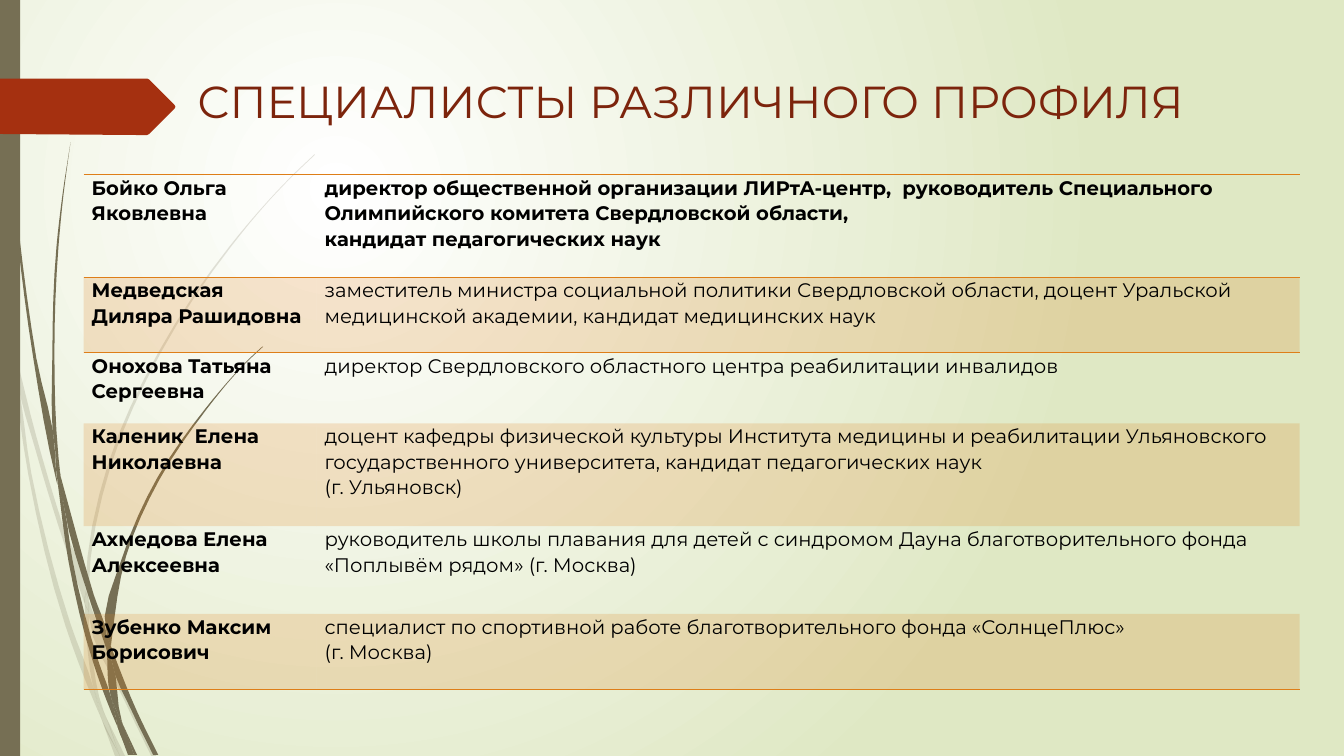
import pptx
import pptx.dml.color
import pptx.enum.shapes
import pptx.enum.text
import pptx.oxml
import pptx.oxml.ns
import pptx.util
from pptx.util import Inches

FONT = "Montserrat"
OLIVE, RUST, DARK_RUST, ORANGE, BLACK = "766F54", "A53010", "7C240C", "DE7E18", "000000"
TITLE = "СПЕЦИАЛИСТЫ РАЗЛИЧНОГО ПРОФИЛЯ"

# Row height, lines of the name, lines of the position
SPECIALISTS = [
    (1.02, ["Бойко Ольга", "Яковлевна"],
     ["директор общественной организации ЛИРтА-центр,  руководитель Специального "
      "Олимпийского комитета Свердловской области,", "кандидат педагогических наук"]),
    (0.75, ["Медведская Диляра Рашидовна"],
     ["заместитель министра социальной политики Свердловской области, доцент Уральской "
      "медицинской академии, кандидат медицинских наук"]),
    (0.7, ["Онохова Татьяна Сергеевна"],
     ["директор Свердловского областного центра реабилитации инвалидов"]),
    (1.02, ["Каленик  Елена Николаевна"],
     ["доцент кафедры физической культуры Института медицины и реабилитации Ульяновского "
      "государственного университета, кандидат педагогических наук", "(г. Ульяновск)"]),
    (0.87, ["Ахмедова Елена Алексеевна"],
     ["руководитель школы плавания для детей с синдромом Дауна благотворительного фонда "
      "«Поплывём рядом» (г. Москва)"]),
    (0.75, ["Зубенко Максим", "Борисович"],
     ["специалист по спортивной работе благотворительного фонда «СолнцеПлюс»", "(г. Москва)"]),
]
COLUMN_WIDTHS = [2.31, 9.75]
BORDERS = {0: "TB", 1: "T", len(SPECIALISTS) - 1: "B"}

PALE_GRASS = [
    [(0.11, 3.5), (0.09, 3.22), (0, 2.82), (0, 2.99), (0.1, 3.44)],
    [(0.58, 5.22), (0.84, 5.99), (0.85, 5.86), (0.62, 5.2), (0.36, 4.33), (0.14, 3.45), (0.17, 3.76), (0.36, 4.49)],
    [(0.92, 6.07), (0.88, 5.96), (0.88, 6.1), (1.23, 6.94), (1.5, 7.5), (1.55, 7.5), (1.27, 6.92)],
    [(1.19, 7.5), (1.24, 7.5), (1.05, 7.11)],
    [(0.93, 6.83), (0.7, 6.19), (0.31, 4.69), (0.17, 3.76), (0.11, 3.5), (0.28, 4.7), (0.65, 6.21), (0.92, 6.93),
     (1.01, 7.14), (0.99, 7.07)],
    [(0.84, 5.99), (0.87, 6.46), (0.93, 6.83), (0.96, 6.92), (1.05, 7.11), (1.03, 7.06), (0.91, 6.46), (0.88, 6.1),
     (0.88, 6.08)],
    [(0.88, 5.84), (1.1, 4.62), (1.6, 3.49), (2.29, 2.45), (2.68, 1.98), (2.9, 1.75), (3.12, 1.54), (3.12, 1.53),
     (2.89, 1.75), (2.68, 1.97), (2.28, 2.44), (1.58, 3.48), (1.07, 4.61), (0.85, 5.84), (0.85, 5.86), (0.88, 5.96)],
    [(1.01, 7.14), (1.14, 7.5), (1.19, 7.5)],
    [(0.88, 6.08), (0.88, 6.1), (0.88, 5.96), (0.85, 5.86), (0.84, 5.99)],
    [(0.96, 6.92), (0.93, 6.83), (0.99, 7.07), (1.01, 7.14), (1.19, 7.5), (1.05, 7.11)],
]
DARK_GRASS = [
    [(0.07, 1.1), (0.17, 2.33), (0.33, 3.55), (0.56, 4.77), (0.57, 4.81), (0.55, 4.57), (0.55, 4.53), (0.36, 3.55),
     (0.19, 2.32), (0.08, 1.09), (0.05, 0.48), (0.04, 0), (0.03, 0), (0.04, 0.48)],
    [(0.88, 5.92), (1.06, 6.45), (1.06, 6.31), (0.93, 5.9), (0.6, 4.72), (0.64, 5.05)],
    [(1.13, 6.49), (1.1, 6.41), (1.11, 6.56), (1.32, 7.08), (1.52, 7.49), (1.57, 7.49), (1.36, 7.06)],
    [(1.1, 6.91), (0.98, 6.57), (0.72, 5.56), (0.64, 5.05), (0.57, 4.77), (0.68, 5.57), (0.93, 6.59), (1.11, 7.08),
     (1.17, 7.22), (1.16, 7.17)],
    [(0.6, 4.72), (0.58, 4.53), (0.54, 3.49), (0.58, 2.45), (0.63, 1.93), (0.7, 1.41), (0.62, 1.93), (0.56, 2.45),
     (0.52, 3.49), (0.55, 4.49)],
    [(1.33, 7.49), (1.36, 7.49), (1.22, 7.19)],
    [(0.57, 4.77), (0.64, 5.05), (0.6, 4.72), (0.55, 4.49), (0.55, 4.53)],
    [(1.11, 6.33), (1.25, 5.52), (1.58, 4.76), (2.05, 4.06), (2.31, 3.74), (2.45, 3.59), (2.61, 3.44), (2.6, 3.44),
     (2.45, 3.58), (2.31, 3.73), (2.04, 4.05), (1.56, 4.74), (1.22, 5.51), (1.06, 6.31), (1.1, 6.41)],
    [(1.17, 7.22), (1.27, 7.49), (1.31, 7.49)],
    [(1.06, 6.45), (1.1, 6.91), (1.16, 7.06), (1.22, 7.19), (1.21, 7.16), (1.11, 6.56), (1.09, 6.51)],
    [(1.06, 6.45), (1.09, 6.51), (1.11, 6.56), (1.1, 6.41), (1.06, 6.31)],
    [(1.16, 7.06), (1.1, 6.91), (1.16, 7.17), (1.17, 7.22), (1.3, 7.49), (1.33, 7.49), (1.22, 7.19)],
]
ARROW = [(0, 0.78), (1.46, 0.78), (1.48, 0.79), (1.73, 1.04), (1.74, 1.06), (1.73, 1.08),
         (1.48, 1.33), (1.46, 1.34), (1.36, 1.34), (0, 1.33)]


def rgb(color):
    return pptx.dml.color.RGBColor.from_string(color)


def xml(source):
    return pptx.oxml.parse_xml(source.replace(">", f" {pptx.oxml.ns.nsdecls('a')}>", 1))


def paint(target, properties, color, percent=100):
    """Fill a shape or cell with one colour at the given opacity."""
    target.fill.solid()
    target.fill.fore_color.rgb = rgb(color)
    if percent < 100:
        hue = properties.find(pptx.oxml.ns.qn("a:solidFill"))[0]
        hue.append(xml(f'<a:alpha val="{percent * 1000}"></a:alpha>'))


def finish(shape, color, percent=100):
    paint(shape, shape.element.spPr, color, percent)
    shape.line.fill.background()
    shape.shadow.inherit = False


def heading(before, knot, after, fallback):
    """Direction of a curve at a knot; sharp corners keep the fallback."""
    came, goes = knot - before, after - knot
    first, second = came / abs(came), goes / abs(goes)
    if (first * second.conjugate()).real < 0.8:
        return fallback
    return (first * abs(goes) + second * abs(came)) / (abs(came) + abs(goes))


def smooth(points):
    """Closed curve through the points, with four steps per span."""
    knots, curve = [complex(*point) for point in points], []
    for index, start in enumerate(knots):
        end, after = (knots[(index + step) % len(knots)] for step in (1, 2))
        chord = end - start
        leave = heading(knots[index - 1], start, end, chord / abs(chord)) * abs(chord)
        arrive = heading(start, end, after, chord / abs(chord)) * abs(chord)
        for t in (0, 0.25, 0.5, 0.75):
            spot = start + chord * t * t * (3 - 2 * t) + t * (1 - t) * (leave * (1 - t) - arrive * t)
            curve.append((spot.real, spot.imag))
    return curve


def add_outline(page, points, color, percent=100):
    corners = [(Inches(x), Inches(y)) for x, y in points]
    builder = page.shapes.build_freeform(*corners[0])
    builder.add_line_segments(corners[1:], close=True)
    finish(builder.convert_to_shape(), color, percent)


def style(paragraph, size, color, bold=False):
    paragraph.font.name, paragraph.font.size = FONT, pptx.util.Pt(size)
    paragraph.font.bold = bold
    paragraph.font.color.rgb = rgb(color)


def set_background(page):
    page.background.fill.solid()
    holder = page.element.find(".//" + pptx.oxml.ns.qn("p:bgPr"))
    holder.replace(holder[0], xml(
        '<a:gradFill><a:gsLst><a:gs pos="0"><a:srgbClr val="FFFFFF"/></a:gs>'
        '<a:gs pos="100000"><a:srgbClr val="DFE8C4"/></a:gs></a:gsLst><a:path path="circle">'
        '<a:fillToRect l="50000" t="50000" r="100000" b="100000"/></a:path></a:gradFill>'))


def add_title(page):
    box = page.shapes.add_textbox(Inches(1.86), Inches(0.68), Inches(10.72), Inches(0.64))
    box.text_frame.word_wrap = True
    box.text_frame.vertical_anchor = pptx.enum.text.MSO_ANCHOR.MIDDLE
    box.text_frame.text = TITLE
    style(box.text_frame.paragraphs[0], 32, DARK_RUST)


def fill_cell(cell, lines, bold, banded, sides):
    cell.margin_left = cell.margin_right = Inches(0.08)
    cell.margin_top = cell.margin_bottom = 0
    cell.text_frame.text = "\n".join(lines)
    for paragraph in cell.text_frame.paragraphs:
        paragraph.line_spacing = 1.07
        style(paragraph, 14, BLACK, bold)
    properties = cell._tc.get_or_add_tcPr()
    if banded:
        paint(cell, properties, ORANGE, 20)
    else:
        cell.fill.background()
    for position, side in enumerate(sides):
        properties.insert(position, xml(
            f'<a:ln{side} w="12700"><a:solidFill><a:srgbClr val="{ORANGE}"/></a:solidFill></a:ln{side}>'))


def add_specialists(page):
    frame = page.shapes.add_table(
        len(SPECIALISTS), 2, Inches(0.83), Inches(1.73), Inches(sum(COLUMN_WIDTHS)),
        Inches(sum(height for height, _, _ in SPECIALISTS)))
    table = frame.table
    table.first_row = table.horz_banding = False
    no_grid = "{2D5ABB26-0587-4C30-8999-92F81FD0307C}"
    frame.element.find(".//" + pptx.oxml.ns.qn("a:tableStyleId")).text = no_grid
    for column, width in zip(table.columns, COLUMN_WIDTHS):
        column.width = Inches(width)
    for row, (height, name, position) in enumerate(SPECIALISTS):
        table.rows[row].height = Inches(height)
        for column, (lines, bold) in enumerate([(name, True), (position, row == 0)]):
            fill_cell(table.cell(row, column), lines, bold, row % 2 == 1, BORDERS.get(row, ""))


deck = pptx.Presentation()
deck.slide_width, deck.slide_height = Inches(13.33), Inches(7.5)
page = deck.slides.add_slide(deck.slide_layouts[6])
set_background(page)
for blades, percent in ((PALE_GRASS, 20), (DARK_GRASS, 100)):
    for blade in blades:
        add_outline(page, smooth(blade), OLIVE, percent)
strip = page.shapes.add_shape(pptx.enum.shapes.MSO_SHAPE.RECTANGLE, 0, 0, Inches(0.2), deck.slide_height)
finish(strip, OLIVE)
add_outline(page, ARROW, RUST)
add_title(page)
add_specialists(page)
deck.save("out.pptx")
